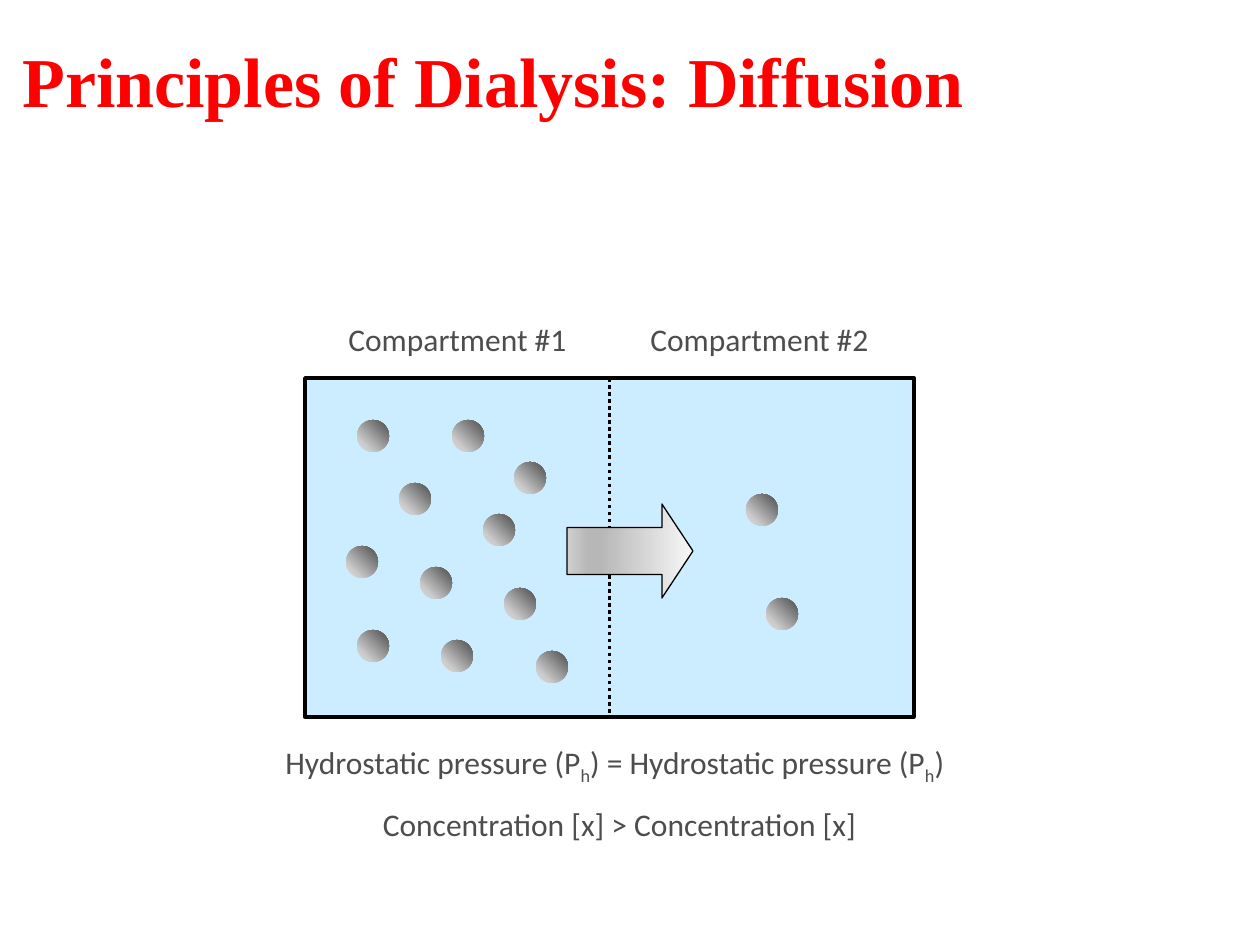
from lxml import etree
from pptx import Presentation
from pptx import util as u
from pptx.dml.color import RGBColor
from pptx.enum import dml, shapes, text
from pptx.oxml.ns import qn

PX = 914400 / 126
COLORS = {
    "title": "FF0000", "body": "4D4D4D", "water": "CCECFF", "outline": "000000",
}
PARTICLE_STOPS = [(0, "DDDDDD"), (23, "CCCCCC"), (100, "4D4D4D")]
ARROW_STOPS = [(0, "F7F7F7"), (74, "B7B7B7"), (83, "B7B7B7"), (100, "CFCFCF")]
PARTICLE_SIZE = 32
PARTICLES_1 = [
    (357, 420), (420, 567), (514, 462), (504, 588), (357, 630), (346, 546),
    (452, 420), (483, 514), (441, 640), (399, 483), (536, 651),
]
PARTICLES_2 = [(746, 494), (766, 598)]


def px(*lengths):
    return [u.Emu(round(length * PX)) for length in lengths]


def rgb(name):
    return RGBColor.from_string(COLORS[name])


def add_text(slide, box, paragraphs, size=18, font="Calibri", color="body", bold=False,
             aligns=(), anchor=text.MSO_ANCHOR.TOP, gap=0, tab=None):
    """Each paragraph is a list of runs; a run starting with "_" is a subscript."""
    frame = slide.shapes.add_textbox(*px(*box)).text_frame
    frame.word_wrap = True
    frame.vertical_anchor = anchor
    for i, runs in enumerate(paragraphs):
        paragraph = frame.paragraphs[0] if i == 0 else frame.add_paragraph()
        if i:
            paragraph.space_before = u.Pt(gap)
        if aligns:
            paragraph.alignment = aligns[i]
        if tab:
            stops = etree.SubElement(paragraph._p.get_or_add_pPr(), qn("a:tabLst"))
            etree.SubElement(stops, qn("a:tab"), pos=str(px(tab)[0]), algn="l")
        for content in runs:
            run = paragraph.add_run()
            run.text = content.removeprefix("_")
            run.font.size, run.font.name, run.font.bold = u.Pt(size), font, bold
            run.font.color.rgb = rgb(color)
            if content.startswith("_"):
                run._r.get_or_add_rPr().set("baseline", "-25000")


def add_figure(slide, kind, box, line_width=0):
    figure = slide.shapes.add_shape(kind, *px(*box))
    figure.shadow.inherit = False
    if line_width:
        figure.line.color.rgb = rgb("outline")
        figure.line.width = u.Pt(line_width)
    else:
        figure.line.fill.background()
    return figure


def fill_gradient(figure, stops, angle):
    """Angle is counter-clockwise, in degrees; stops are (percent, colour)."""
    figure.fill.gradient()
    figure.fill.gradient_angle = angle
    stop_list = figure._element.spPr.find(".//" + qn("a:gsLst"))
    for old in list(stop_list):
        stop_list.remove(old)
    for percent, color in stops:
        stop = etree.SubElement(stop_list, qn("a:gs"), pos=str(percent * 1000))
        etree.SubElement(stop, qn("a:srgbClr"), val=color)


def add_membrane(slide, tank):
    membrane = slide.shapes.add_connector(shapes.MSO_CONNECTOR.STRAIGHT, 0, 0, 0, 0)
    membrane.begin_connect(tank, 0)
    membrane.end_connect(tank, 2)
    membrane.line.color.rgb = rgb("outline")
    membrane.line.width = u.Pt(2)
    membrane.line.dash_style = dml.MSO_LINE.ROUND_DOT
    etree.SubElement(membrane._element.spPr, qn("a:effectLst"))


def add_particle(slide, left, top):
    particle = add_figure(slide, shapes.MSO_SHAPE.OVAL,
                          (left, top, PARTICLE_SIZE, PARTICLE_SIZE))
    fill_gradient(particle, PARTICLE_STOPS, 45)


def add_flow_arrow(slide):
    arrow = add_figure(slide, shapes.MSO_SHAPE.RIGHT_ARROW, (567, 504, 126, 94), 0.75)
    arrow.adjustments[0], arrow.adjustments[1] = 0.5, 0.33
    fill_gradient(arrow, ARROW_STOPS, 180)


def main():
    deck = Presentation()
    deck.slide_width, deck.slide_height = px(1260, 945)
    slide = deck.slides.add_slide(deck.slide_layouts[6])

    add_text(slide, (10, 0, 1134, 158), [["Principles of Dialysis: Diffusion"]], size=40,
             font="Times New Roman", color="title", bold=True,
             anchor=text.MSO_ANCHOR.MIDDLE)

    tank = add_figure(slide, shapes.MSO_SHAPE.RECTANGLE, (305, 378, 609, 339), 2)
    tank.fill.solid()
    tank.fill.fore_color.rgb = rgb("water")
    add_membrane(slide, tank)
    for left, top in PARTICLES_1 + PARTICLES_2:
        add_particle(slide, left, top)
    add_flow_arrow(slide)

    add_text(slide, (336, 314, 609, 50), [["Compartment #1\tCompartment #2"]], tab=302)
    add_text(slide, (273, 737, 693, 108), [
        ["Hydrostatic pressure (P", "_h", ") = Hydrostatic pressure (P", "_h", ")"],
        ["Concentration [x] > Concentration [x]"],
    ], aligns=(text.PP_ALIGN.LEFT, text.PP_ALIGN.CENTER), gap=11)

    deck.save("out.pptx")


if __name__ == "__main__":
    main()
